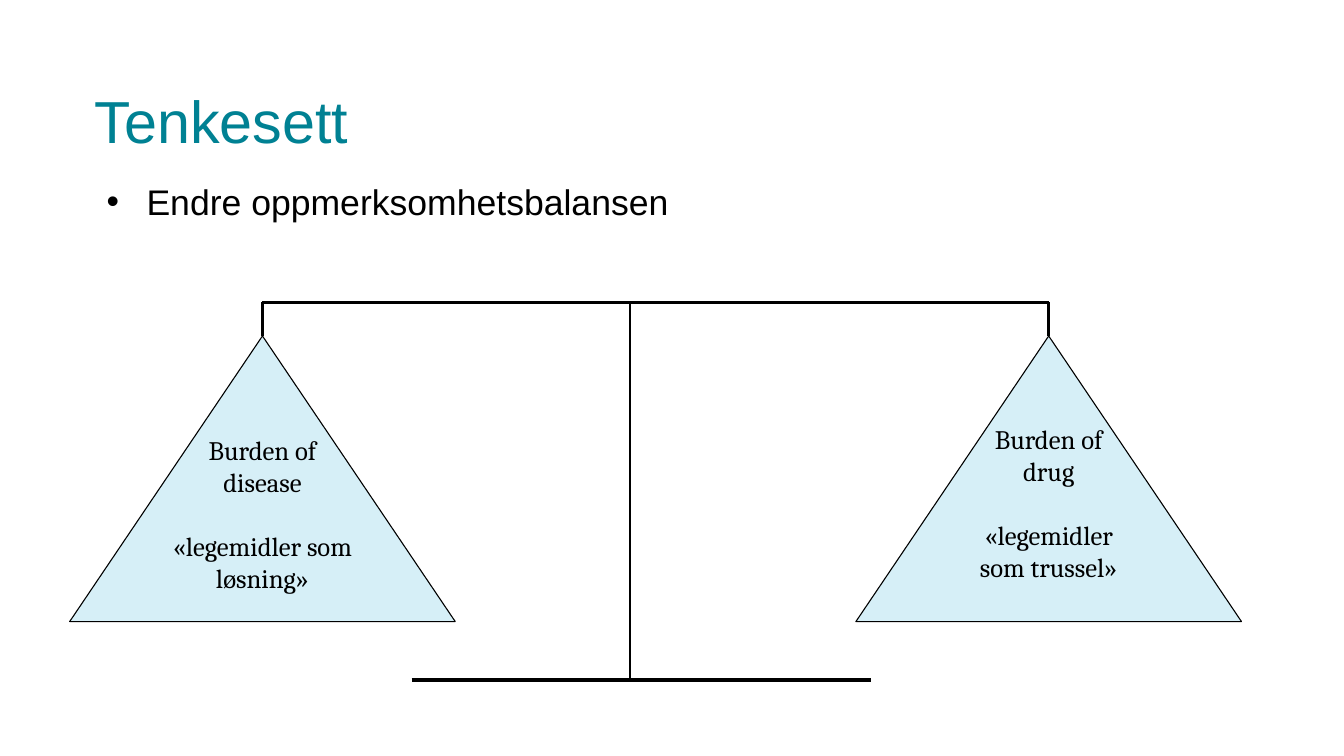
from dataclasses import dataclass

from lxml import etree
from pptx import Presentation
from pptx.dml.color import RGBColor
from pptx.enum.shapes import MSO_CONNECTOR, MSO_SHAPE
from pptx.enum.text import MSO_ANCHOR, MSO_AUTO_SIZE, PP_ALIGN
from pptx.oxml.ns import qn
from pptx.util import Cm, Pt


@dataclass(frozen=True)
class Theme:
    black: RGBColor = RGBColor(0, 0, 0)
    teal: RGBColor = RGBColor(0x00, 0x81, 0x93)
    pale_blue: RGBColor = RGBColor(0xD6, 0xEF, 0xF7)
    sans: str = "Arial"
    serif: str = "Cambria"
    title_size: Pt = Pt(40)
    bullet_size: Pt = Pt(24)
    label_size: Pt = Pt(18)


theme = Theme()


def set_font(paragraph, name, size, color):
    paragraph.font.name = name
    paragraph.font.size = size
    paragraph.font.color.rgb = color


presentation = Presentation()
presentation.slide_width = Cm(32)
presentation.slide_height = Cm(18)
slide = presentation.slides.add_slide(presentation.slide_layouts[5])

# Title
title = slide.shapes.title
title.left, title.top, title.width, title.height = Cm(2), Cm(1.8), Cm(25.2), Cm(2.4)
title.text_frame.text = "Tenkesett"
title.text_frame.auto_size = MSO_AUTO_SIZE.NONE
title.text_frame.vertical_anchor = MSO_ANCHOR.MIDDLE
paragraph = title.text_frame.paragraphs[0]
paragraph.alignment = PP_ALIGN.LEFT
paragraph.line_spacing = 0.8
set_font(paragraph, theme.sans, theme.title_size, theme.teal)

# Balance: beam, post, hangers and foot
BEAM_Y, PAN_Y, FOOT_Y = 7.2, 8, 16.2
LEFT_X, POST_X, RIGHT_X = 6.25, 15, 24.97
PAN_WIDTH, PAN_HEIGHT = 9.18, 6.8

balance = slide.shapes.add_group_shape()
for x1, y1, x2, y2, weight in [
    (LEFT_X, BEAM_Y, RIGHT_X, BEAM_Y, 2),
    (POST_X, BEAM_Y, POST_X, FOOT_Y, 2),
    (LEFT_X, BEAM_Y, LEFT_X, PAN_Y, 2),
    (RIGHT_X, BEAM_Y, RIGHT_X, PAN_Y, 2),
    (9.8, FOOT_Y, 20.73, FOOT_Y, 2.75),
]:
    line = balance.shapes.add_connector(
        MSO_CONNECTOR.STRAIGHT, Cm(x1), Cm(y1), Cm(x2), Cm(y2))
    line.line.color.rgb = theme.black
    line.line.width = Pt(weight)
    etree.SubElement(line._element.spPr, qn("a:effectLst"))

# Pans and their labels, centred under the hangers
for center, label_top, label_width, lines in [
    (LEFT_X, 10.2, 5.13, ["Burden of", "disease", "«legemidler som løsning»"]),
    (RIGHT_X, 9.95, 3.81, ["Burden of drug", "«legemidler som trussel»"]),
]:
    pan = balance.shapes.add_shape(
        MSO_SHAPE.ISOSCELES_TRIANGLE, Cm(center - PAN_WIDTH / 2), Cm(PAN_Y),
        Cm(PAN_WIDTH), Cm(PAN_HEIGHT))
    pan.shadow.inherit = False
    pan.fill.solid()
    pan.fill.fore_color.rgb = theme.pale_blue
    pan.line.color.rgb = theme.black
    pan.line.width = Pt(0.75)

    label = balance.shapes.add_textbox(
        Cm(center - label_width / 2), Cm(label_top), Cm(label_width), Cm(4.88))
    label.text_frame.word_wrap = True
    label.text_frame.text = "\n".join(lines)
    for paragraph in label.text_frame.paragraphs:
        paragraph.alignment = PP_ALIGN.CENTER
        set_font(paragraph, theme.serif, theme.label_size, theme.black)
    paragraph.space_before = Pt(21.5)

# Bullet
bullet = slide.shapes.add_textbox(Cm(2.29), Cm(4.17), Cm(18.16), Cm(1.27))
bullet.text_frame.word_wrap = True
bullet.text_frame.text = "Endre oppmerksomhetsbalansen"
paragraph = bullet.text_frame.paragraphs[0]
set_font(paragraph, theme.sans, theme.bullet_size, theme.black)
properties = paragraph._p.get_or_add_pPr()
properties.set("marL", str(Cm(0.95)))
properties.set("indent", str(-Cm(0.95)))
bullet_font = etree.Element(qn("a:buFont"), typeface=theme.sans)
bullet_character = etree.Element(qn("a:buChar"), char="•")
properties.insert(0, bullet_font)
properties.insert(1, bullet_character)

presentation.save("out.pptx")
